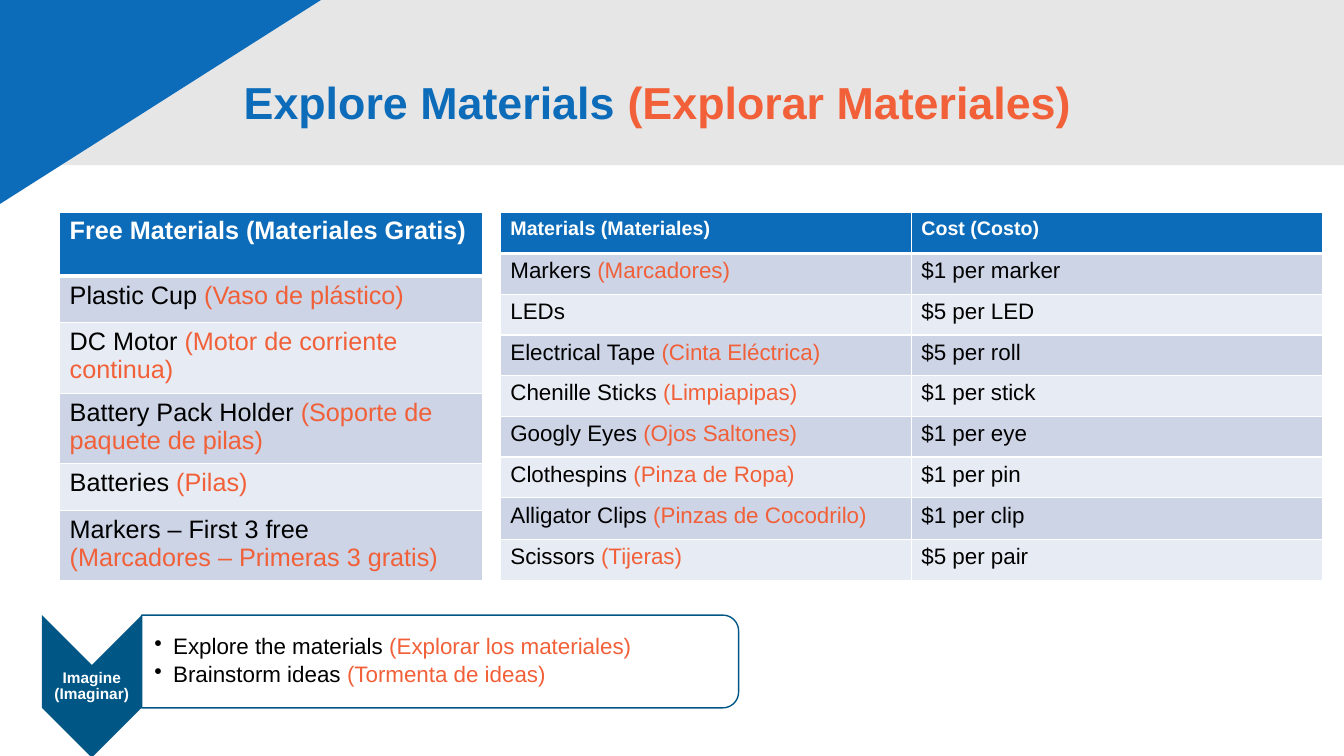
"""Build the bilingual Explore Materials slide with two material tables."""
import math

from lxml import etree
from pptx import Presentation
from pptx.dml.color import RGBColor
from pptx.enum.shapes import MSO_SHAPE
from pptx.enum.text import MSO_ANCHOR, PP_ALIGN
from pptx.oxml.ns import qn
from pptx.util import Pt

RECTANGLE = MSO_SHAPE.RECTANGLE
RIGHT_TRIANGLE = MSO_SHAPE.RIGHT_TRIANGLE
MIDDLE = MSO_ANCHOR.MIDDLE
CENTER = PP_ALIGN.CENTER
FONT = "Arial"
COLORS = {
    "blue": "0D6CB9", "orange": "F16038", "gray": "E7E6E6", "navy": "005786",
    "white": "FFFFFF", "black": "000000", "dark band": "CCD4E6", "light band": "E7EBF3",
}

TITLE = "Explore Materials (Explorar Materiales)"
STEP = "Imagine (Imaginar)"
TASKS = "Explore the materials (Explorar los materiales)\nBrainstorm ideas (Tormenta de ideas)"
FREE_MATERIALS = [
    ("Free Materials (Materiales Gratis)",),
    ("Plastic Cup (Vaso de plástico)",),
    ("DC Motor (Motor de corriente continua)",),
    ("Battery Pack Holder (Soporte de paquete de pilas)",),
    ("Batteries (Pilas)",),
    ("Markers – First 3 free\n(Marcadores – Primeras 3 gratis)",),
]
PRICED_MATERIALS = [
    ("Materials (Materiales)", "Cost (Costo)"),
    ("Markers (Marcadores)", "$1 per marker"),
    ("LEDs", "$5 per LED"),
    ("Electrical Tape (Cinta Eléctrica)", "$5 per roll"),
    ("Chenille Sticks (Limpiapipas)", "$1 per stick"),
    ("Googly Eyes (Ojos Saltones)", "$1 per eye"),
    ("Clothespins (Pinza de Ropa)", "$1 per pin"),
    ("Alligator Clips (Pinzas de Cocodrilo)", "$1 per clip"),
    ("Scissors (Tijeras)", "$5 per pair"),
]
FREE_HEIGHTS = [46, 33.1, 46, 46, 33.1, 46]
PRICED_HEIGHTS = [29.1] * 7 + [30, 29.1]

SLIDE_WIDTH, SLIDE_HEIGHT = 960, 540
BAND_HEIGHT = 118
CORNER_WIDTH, CORNER_HEIGHT = 229.3, 145.7
STEP_LEFT, STEP_TOP, STEP_WIDTH, STEP_HEIGHT = 30, 439.4, 71.2, 66.2
TASKS_WIDTH, TASKS_RADIUS = 426.4, 11.2


def color(name):
    return RGBColor.from_string(COLORS[name])


def write(frame, text, size, english="black", spanish="orange", bold=False):
    frame.text = text
    for paragraph in frame.paragraphs:
        before, bracket, after = paragraph.text.partition("(")
        paragraph.text = before
        if bracket:
            paragraph.add_run().text = bracket + after
        for run in paragraph.runs:
            run.font.name = FONT
            run.font.size = Pt(size)
            run.font.bold = bold
            run.font.color.rgb = color(spanish if run.text.startswith("(") else english)


def set_margins(frame, left, top, right, bottom):
    frame.margin_left, frame.margin_top = Pt(left), Pt(top)
    frame.margin_right, frame.margin_bottom = Pt(right), Pt(bottom)
    frame.vertical_anchor = MIDDLE
    frame.word_wrap = True


def paint(shape, fill, line=None):
    shape.shadow.inherit = False
    shape.fill.solid()
    shape.fill.fore_color.rgb = color(fill)
    if line:
        shape.line.color.rgb = color(line)
        shape.line.width = Pt(1)
    else:
        shape.line.fill.background()


def add_outline(slide, points):
    start, *others = [(round(x * 100), round(y * 100)) for x, y in points]
    builder = slide.shapes.build_freeform(*start, scale=Pt(1) / 100)
    builder.add_line_segments(others, close=True)
    return builder.convert_to_shape()


def set_borders(cell, widths):
    properties = cell._tc.get_or_add_tcPr()
    for index, (side, width) in enumerate(widths.items()):
        line = etree.Element(qn("a:ln" + side), w=str(Pt(width)))
        fill = etree.SubElement(line, qn("a:solidFill"))
        etree.SubElement(fill, qn("a:srgbClr"), val=COLORS["white"])
        properties.insert(index, line)


def add_table(slide, rows, left, top, width, heights, header_size, body_size):
    columns = len(rows[0])
    frame = slide.shapes.add_table(
        len(rows), columns, Pt(left), Pt(top), Pt(width), Pt(sum(heights)))
    table = frame.table
    table.first_row = table.horz_banding = False
    for column in table.columns:
        column.width = Pt(width / columns)
    for number, (texts, height) in enumerate(zip(rows, heights)):
        table.rows[number].height = Pt(height)
        band = "dark band" if number % 2 else "light band"
        for cell, text in zip(table.rows[number].cells, texts):
            cell.fill.solid()
            cell.fill.fore_color.rgb = color(band if number else "blue")
            if number:
                write(cell.text_frame, text, body_size)
            else:
                write(cell.text_frame, text, header_size, "white", "white", True)
            set_borders(cell, {"L": 1, "R": 1, "T": 3 if number == 1 else 1,
                               "B": 1 if number else 3})


def add_header(slide):
    band = slide.shapes.add_shape(RECTANGLE, 0, 0, Pt(SLIDE_WIDTH), Pt(BAND_HEIGHT))
    paint(band, "gray")
    offset = (CORNER_WIDTH - CORNER_HEIGHT) / 2
    corner = slide.shapes.add_shape(
        RIGHT_TRIANGLE, Pt(offset), Pt(-offset), Pt(CORNER_HEIGHT), Pt(CORNER_WIDTH))
    corner.rotation = 90
    paint(corner, "blue")
    title = slide.shapes.add_textbox(Pt(167), Pt(23), Pt(698.4), Pt(104.4))
    set_margins(title.text_frame, 7.2, 3.6, 7.2, 3.6)
    write(title.text_frame, TITLE, 32, "blue", bold=True)
    title.text_frame.paragraphs[0].line_spacing = 0.9


def add_step(slide):
    half = STEP_WIDTH / 2
    middle, right = STEP_LEFT + half, STEP_LEFT + STEP_WIDTH
    bottom = STEP_TOP + STEP_HEIGHT
    chevron = add_outline(slide, [
        (STEP_LEFT, STEP_TOP), (middle, STEP_TOP + half), (right, STEP_TOP),
        (right, bottom), (middle, bottom + half), (STEP_LEFT, bottom)])
    paint(chevron, "navy")
    set_margins(chevron.text_frame, 0.7, 34, 0.7, 34)
    write(chevron.text_frame, STEP, 11, "white", "white", True)
    paragraph = chevron.text_frame.paragraphs[0]
    paragraph.alignment = CENTER
    paragraph.line_spacing = 0.9
    paragraph.space_after = Pt(3.85)


def add_tasks(slide):
    left, bottom = STEP_LEFT + STEP_WIDTH, STEP_TOP + STEP_HEIGHT
    center_x = left + TASKS_WIDTH - TASKS_RADIUS
    points = [(left, bottom), (left, STEP_TOP)]
    for first, center_y in ((-90, STEP_TOP + TASKS_RADIUS), (0, bottom - TASKS_RADIUS)):
        for degrees in range(first, first + 91, 10):
            angle = math.radians(degrees)
            points.append((center_x + TASKS_RADIUS * math.cos(angle),
                           center_y + TASKS_RADIUS * math.sin(angle)))
    panel = add_outline(slide, points)
    paint(panel, "white", "navy")
    set_margins(panel.text_frame, 9, 3.6, 3.6, 3.6)
    write(panel.text_frame, TASKS, 16)
    for paragraph in panel.text_frame.paragraphs:
        paragraph.alignment = PP_ALIGN.LEFT
        paragraph.line_spacing = 0.9
        paragraph.space_after = Pt(2.4)
        properties = paragraph._p.get_or_add_pPr()
        properties.set("marL", str(Pt(13.5)))
        properties.set("indent", str(Pt(-13.5)))
        etree.SubElement(properties, qn("a:buChar"), char="•")


def main():
    presentation = Presentation()
    presentation.slide_width, presentation.slide_height = Pt(SLIDE_WIDTH), Pt(SLIDE_HEIGHT)
    slide = presentation.slides.add_slide(presentation.slide_layouts[6])
    add_header(slide)
    add_step(slide)
    add_tasks(slide)
    add_table(slide, FREE_MATERIALS, 42.6, 151.4, 302, FREE_HEIGHTS, 18, 18)
    add_table(slide, PRICED_MATERIALS, 357.4, 152, 587.2, PRICED_HEIGHTS, 14, 16)
    presentation.save("out.pptx")


if __name__ == "__main__":
    main()
